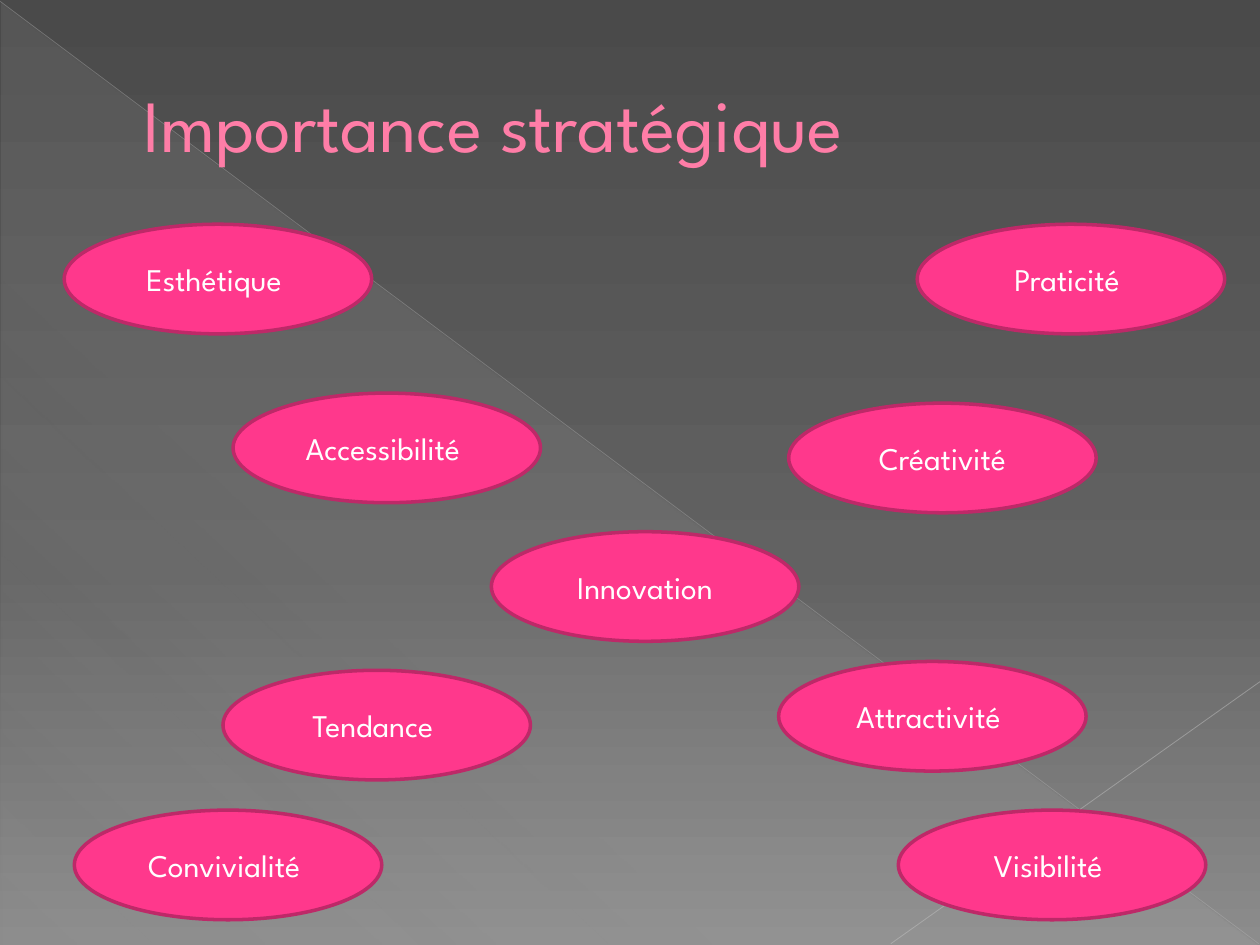
from pptx import Presentation
from pptx.dml.color import RGBColor
from pptx.enum.shapes import MSO_CONNECTOR as Connector, MSO_SHAPE as Shape
from pptx.enum.text import MSO_ANCHOR as Anchor, PP_ALIGN as Align
from pptx.oxml.ns import qn
from pptx.util import Inches, Pt
from lxml.etree import SubElement

FONT = "League Spartan"
PINK, DARK_PINK, TITLE_PINK = "FF388C", "BD2968", "FF7DA7"
OVAL_SIZE = 2.44, 0.87
TOP_ROW, BOTTOM_ROW = 1.78, 6.43
QUALITIES = [
    ("Accessibilité ", 1.85, 3.12),
    ("Tendance ", 1.77, 5.32),
    ("Innovation", 3.9, 4.22),
    ("Créativité", 6.26, 3.2),
    ("Praticité ", 7.28, TOP_ROW),
    ("Visibilité ", 7.13, BOTTOM_ROW),
    ("Esthétique ", 0.51, TOP_ROW),
    ("Attractivité ", 6.18, 5.25),
    ("Convivialité ", 0.59, BOTTOM_ROW),
]


def rgb(value):
    return RGBColor.from_string(value)


def add_color(parent, color, opacity=100):
    element = SubElement(parent, qn("a:srgbClr"), val=color)
    if opacity < 100:
        SubElement(element, qn("a:alpha"), val=str(opacity * 1000))


class SlideBuilder:
    """Holds the style and the current slide, and draws each kind of element."""

    def __init__(self, presentation):
        self.slide = presentation.slides.add_slide(presentation.slide_layouts[6])
        self.shapes = self.slide.shapes

    def gradient(self, fill, owner, stops, angle):
        fill.gradient()
        fill.gradient_angle = 360 - angle
        stop_list = next(owner.iter(qn("a:gsLst")))
        for stop in list(stop_list):
            stop_list.remove(stop)
        for position, color, opacity in stops:
            stop = SubElement(stop_list, qn("a:gs"), pos=str(position * 1000))
            add_color(stop, color, opacity)

    def background(self, stops, angle):
        self.gradient(self.slide.background.fill, self.slide.element, stops, angle)

    def triangle(self, left, top, width, height, stops, angle):
        shape = self.shapes.add_shape(
            Shape.RIGHT_TRIANGLE, Inches(left), Inches(top), Inches(width), Inches(height))
        shape.shadow.inherit = False
        shape.line.fill.background()
        self.gradient(shape.fill, shape.element, stops, angle)

    def line(self, start, end, color, width, opacity):
        connector = self.shapes.add_connector(
            Connector.STRAIGHT, *map(Inches, start), *map(Inches, end))
        connector.line.width = Pt(width)
        connector.line.color.rgb = rgb(color)
        color_element = next(connector.element.spPr.iter(qn("a:srgbClr")))
        SubElement(color_element, qn("a:alpha"), val=str(opacity * 1000))
        SubElement(connector.element.spPr, qn("a:effectLst"))

    def text(self, shape, wording, size, color):
        frame = shape.text_frame
        frame.word_wrap = True
        frame.vertical_anchor = Anchor.MIDDLE
        paragraph = frame.paragraphs[0]
        run = paragraph.add_run()
        run.text = wording
        run.font.name = FONT
        run.font.size = Pt(size)
        run.font.color.rgb = rgb(color)
        return paragraph, run

    def title(self, wording, left, top, width, height, indent):
        box = self.shapes.add_textbox(Inches(left), Inches(top), Inches(width), Inches(height))
        paragraph, run = self.text(box, wording, 42, TITLE_PINK)
        properties = paragraph._p.get_or_add_pPr()
        properties.set("marL", str(Inches(indent)))
        properties.set("indent", "0")
        run_properties = run._r.get_or_add_rPr()
        outline = SubElement(run_properties, qn("a:ln"), w=str(Pt(0.5)))
        add_color(SubElement(outline, qn("a:solidFill")), "B12761")
        run_properties.insert(0, outline)

    def oval(self, wording, left, top):
        shape = self.shapes.add_shape(
            Shape.OVAL, Inches(left), Inches(top), *map(Inches, OVAL_SIZE))
        shape.shadow.inherit = False
        shape.fill.solid()
        shape.fill.fore_color.rgb = rgb(PINK)
        shape.line.color.rgb = rgb(DARK_PINK)
        shape.line.width = Pt(2)
        paragraph, _ = self.text(shape, wording, 18, "FFFFFF")
        paragraph.alignment = Align.CENTER


def main():
    presentation = Presentation()
    presentation.slide_width = Inches(10)
    presentation.slide_height = Inches(7.5)
    builder = SlideBuilder(presentation)
    builder.background([(0, "4A4A4A", 100), (60, "626262", 100), (100, "8C8C8C", 100)], 90)
    builder.triangle(0.01, 0.02, 9.98, 7.48,
                     [(0, "D2D2D2", 10), (70, "D2D2D2", 8), (100, "D2D2D2", 1)], 133)
    builder.line((0, 0.01), (9.99, 7.49), "BFBFBF", 0.39, 35)
    builder.line((10, 5.41), (7.07, 7.49), "C6C6C6", 0.47, 45)
    builder.title("Importance stratégique", 0.51, 0.21, 9, 1.53, indent=0.53)
    for wording, left, top in QUALITIES:
        builder.oval(wording, left, top)
    presentation.save("out.pptx")


if __name__ == "__main__":
    main()
